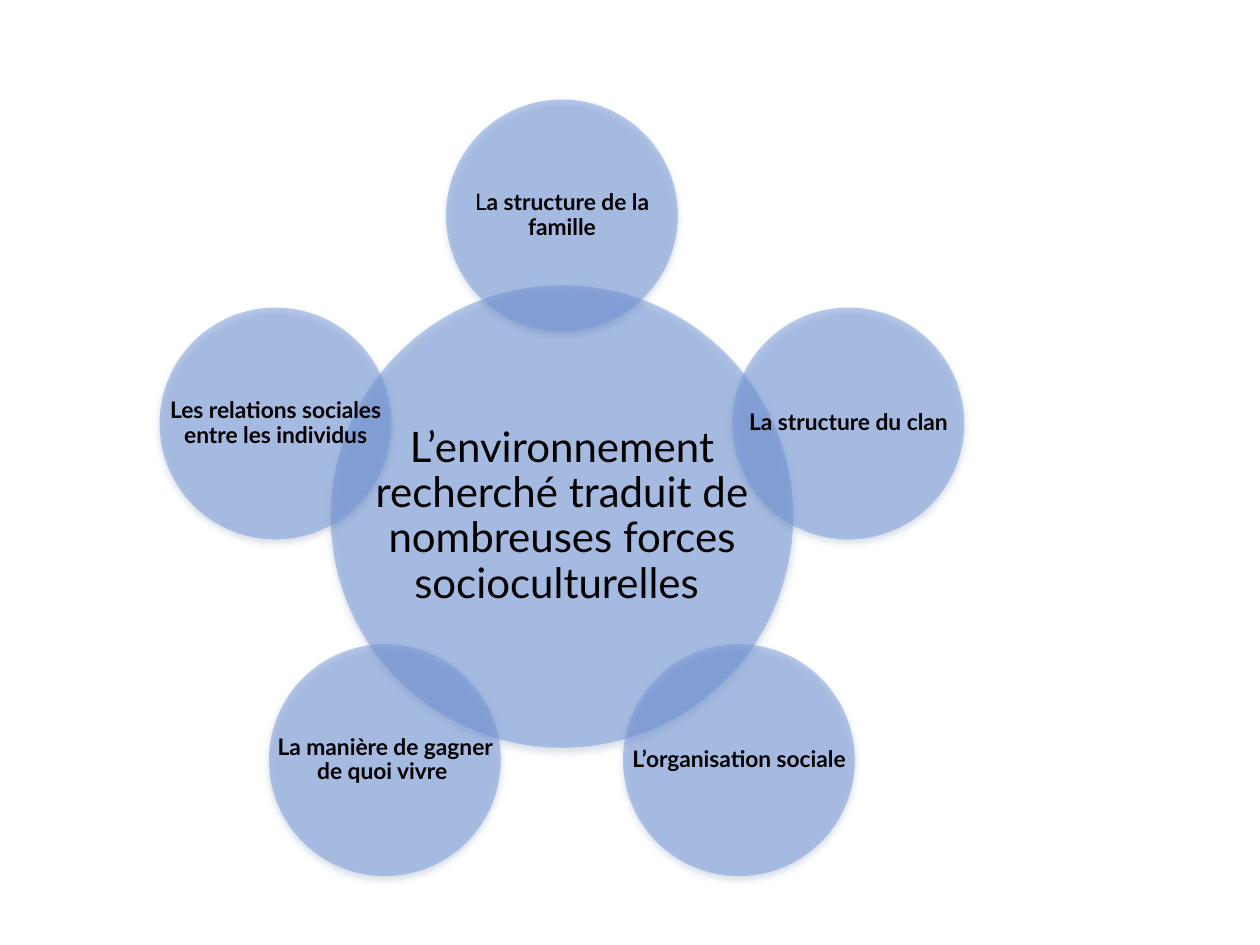
"""Build a radial Venn slide on the sociocultural forces around an environment."""
import math

import lxml.etree
import pptx
import pptx.dml.color
import pptx.enum.shapes
import pptx.enum.text
import pptx.oxml.ns
import pptx.util

Inches = pptx.util.Inches
Pt = pptx.util.Pt
qn = pptx.oxml.ns.qn

CORE = [("L’environnement recherché traduit de nombreuses forces socioculturelles ", False)]
FORCES = [
    [("L", False), ("a structure de la famille", True)],
    [("La structure du clan", True)],
    [("L’organisation sociale", True)],
    [("La manière de gagner de quoi vivre ", True)],
    [("Les relations sociales entre les individus", True)],
]
CENTER_X, CENTER_Y, ORBIT = 4.46, 4.1, 2.39
CORE_SIZE, FORCE_SIZE = 3.67, 1.84
FILL, SHADOW, INK, FONT = "7598D9", "37568F", "000000", "Lato"


def rgb(value):
    return pptx.dml.color.RGBColor.from_string(value)


def add_alpha(color, percent):
    lxml.etree.SubElement(color, qn("a:alpha"), val=str(percent * 1000))


def add_shadow(shape):
    shape.shadow.inherit = False
    effects = shape._element.spPr.find(qn("a:effectLst"))
    outer = lxml.etree.SubElement(
        effects, qn("a:outerShdw"), blurRad=str(Pt(4)), dist=str(Pt(2)),
        dir=str(90 * 60000), rotWithShape="0")
    add_alpha(lxml.etree.SubElement(outer, qn("a:srgbClr"), val=SHADOW), 38)


def add_circle(shapes, x, y, size, spans, points, inset):
    frame = [Inches(v) for v in (x - size / 2, y - size / 2, size, size)]
    circle = shapes.add_shape(pptx.enum.shapes.MSO_SHAPE.OVAL, *frame)
    circle.fill.solid()
    circle.fill.fore_color.rgb = rgb(FILL)
    add_alpha(circle._element.spPr.find(qn("a:solidFill"))[0], 50)
    circle.line.fill.background()
    add_shadow(circle)

    text = shapes.add_textbox(*frame).text_frame
    text.word_wrap = True
    text.vertical_anchor = pptx.enum.text.MSO_ANCHOR.MIDDLE
    text.margin_left = text.margin_right = Inches(inset)
    text.margin_top = text.margin_bottom = Inches(inset)
    paragraph = text.paragraphs[0]
    paragraph.alignment = pptx.enum.text.PP_ALIGN.CENTER
    paragraph.line_spacing = 0.9
    for words, bold in spans:
        span = paragraph.add_run()
        span.text = words
        span.font.name = FONT
        span.font.size = Pt(points)
        span.font.bold = bold
        span.font.color.rgb = rgb(INK)


def main():
    deck = pptx.Presentation()
    deck.slide_width, deck.slide_height = Inches(10), Inches(7.5)
    page = deck.slides.add_slide(deck.slide_layouts[6])
    diagram = page.shapes.add_group_shape().shapes
    add_circle(diagram, CENTER_X, CENTER_Y, CORE_SIZE, CORE, 24, 0.03)
    for index, spans in enumerate(FORCES):
        angle = 2 * math.pi * index / len(FORCES)
        add_circle(diagram, CENTER_X + ORBIT * math.sin(angle),
                   CENTER_Y - ORBIT * math.cos(angle), FORCE_SIZE, spans, 13, 0.02)
    deck.save("out.pptx")


if __name__ == "__main__":
    main()
